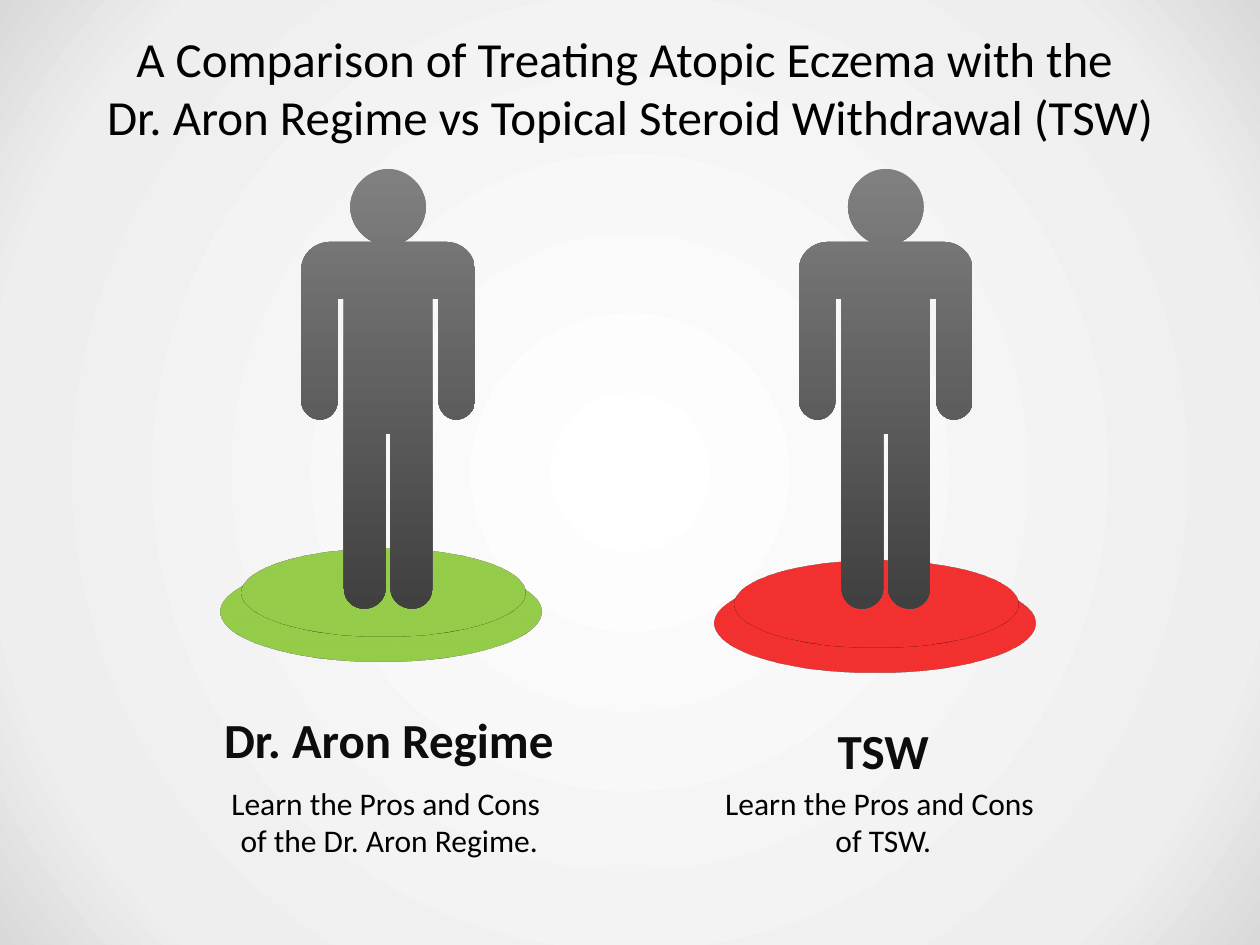
from pptx import Presentation, oxml, util as u
from pptx.dml.color import RGBColor
from pptx.enum import shapes, text

THEME = dict(font="Calibri", ink="000000", head="0D0D0D", big=28, small=18,
             body=("808080", "404040"),
             back=((0, "FFFFFF"), (81, "EEEEEE"), (100, "D9D9D9")))
NS = 'xmlns:a="http://schemas.openxmlformats.org/drawingml/2006/main"'

TITLE = ("A Comparison of Treating Atopic Eczema with the ",
         "Dr. Aron Regime vs Topical Steroid Withdrawal (TSW)")
SIDES = [
    dict(name="Dr. Aron Regime", note=("Learn the Pros and Cons ", "of the Dr. Aron Regime."),
         fill="639A1A", discs=((1.75, 3.58, 2.55), (1.92, 3.58, 2.25)), mid=3.08,
         head=(1.5, 5.58, 3.17, 0.57), foot=(1.5, 6.17, 3.18, 0.71)),
    dict(name="TSW", note=("Learn the Pros and Cons ", "of TSW."),
         fill="C00000", discs=((5.67, 3.67, 2.55), (5.83, 3.67, 2.25)), mid=7.03,
         head=(6.26, 5.67, 1.5, 0.57), foot=(5.42, 6.17, 3.18, 0.71)),
]
TOP = 1.34
TILT = 288  # degrees about the x axis, lays the discs flat
# Right half of the figure from the crown: one point is a line, three a curve
HALF = [
    [(0.16, 0), (0.3, 0.14), (0.3, 0.3)],            # head
    [(0.3, 0.43), (0.22, 0.53), (0.12, 0.58)],
    [(0.46, 0.58)],
    [(0.59, 0.58), (0.69, 0.68), (0.69, 0.8)],       # shoulder
    [(0.69, 1.84)],
    [(0.69, 1.92), (0.62, 1.99), (0.54, 1.99)],      # hand
    [(0.46, 1.99), (0.4, 1.92), (0.4, 1.84)],
    [(0.4, 1.03)], [(0.35, 1.03)], [(0.35, 3.33)],   # armpit and leg
    [(0.35, 3.42), (0.28, 3.49), (0.19, 3.49)],      # foot
    [(0.1, 3.49), (0.02, 3.42), (0.02, 3.33)],
    [(0.02, 2.1)],                                   # crotch
]


def rgb(code):
    return RGBColor.from_string(code)


def write(slide, box, lines, size, color, bold=False, split=True):
    """Centred text; split gives each line its own paragraph, else a break."""
    frame = slide.shapes.add_textbox(*map(u.Inches, box)).text_frame
    frame.word_wrap = True
    para = frame.paragraphs[0]
    for i, line in enumerate(lines):
        if i and split:
            para = frame.add_paragraph()
        elif i:
            para.add_line_break()
        para.alignment = text.PP_ALIGN.CENTER
        run = para.add_run()
        run.text = line
        font = run.font
        font.name, font.size, font.bold = THEME["font"], u.Pt(size), bold
        font.color.rgb = rgb(color)
    return frame


def stand(slide, side):
    for left, top, size in side["discs"]:
        disc = slide.shapes.add_shape(
            shapes.MSO_SHAPE.OVAL, *map(u.Inches, (left, top, size, size)))
        disc.shadow.inherit = False
        disc.fill.solid()
        disc.fill.fore_color.rgb = rgb(side["fill"])
        disc.line.fill.background()
        disc.element.spPr.append(oxml.parse_xml(
            f'<a:scene3d {NS}><a:camera prst="orthographicFront">'
            f'<a:rot lat="{TILT * 60000}" lon="0" rev="0"/></a:camera>'
            '<a:lightRig rig="threePt" dir="t"/></a:scene3d>'))


def bend(shape, sizes):
    """Join each group of three line steps into one Bezier curve."""
    steps = iter(shape.element.xpath(".//a:path/a:lnTo"))
    for size in sizes:
        group = [next(steps) for _ in range(size)]
        if size == 3:
            curve = oxml.parse_xml(f"<a:cubicBezTo {NS}/>")
            group[0].addprevious(curve)
            for step in group:
                curve.append(step[0])
                step.getparent().remove(step)


def person(slide, mid):
    right = [(0, 0)] + [spot for step in HALF for spot in step]
    outline = right + [(-x, y) for x, y in reversed(right)]
    sizes = [len(step) for step in HALF]
    spots = [(u.Inches(mid + x), u.Inches(TOP + y)) for x, y in outline]
    pen = slide.shapes.build_freeform(*spots[0], scale=1.0)
    pen.add_line_segments(spots[1:], close=True)
    body = pen.convert_to_shape()
    bend(body, sizes + [1] + sizes[::-1])
    body.shadow.inherit = False
    body.line.fill.background()
    body.fill.gradient()
    body.fill.gradient_angle = 270
    for stop, color in zip(body.fill.gradient_stops, THEME["body"]):
        stop.color.rgb = rgb(color)


def glow(slide):
    """Circular background gradient from the slide centre."""
    slide.background.fill.gradient()
    old = slide.element.xpath(".//p:bgPr/a:gradFill")[0]
    stops = "".join(f'<a:gs pos="{at * 1000}"><a:srgbClr val="{color}"/></a:gs>'
                    for at, color in THEME["back"])
    new = oxml.parse_xml(
        f'<a:gradFill {NS} rotWithShape="1"><a:gsLst>{stops}</a:gsLst><a:path path="circle">'
        '<a:fillToRect l="50000" t="50000" r="50000" b="50000"/></a:path></a:gradFill>')
    old.getparent().replace(old, new)


def main():
    deck = Presentation()
    deck.slide_width, deck.slide_height = u.Inches(10), u.Inches(7.5)
    slide = deck.slides.add_slide(deck.slide_layouts[6])
    glow(slide)
    title = write(slide, (0.5, 0.3, 9, 0.78), TITLE, THEME["big"], THEME["ink"], split=False)
    title.vertical_anchor = text.MSO_ANCHOR.MIDDLE
    for side in SIDES:
        stand(slide, side)
        person(slide, side["mid"])
        for box, lines, size, color, bold in (
                (side["head"], [side["name"]], THEME["big"], THEME["head"], True),
                (side["foot"], side["note"], THEME["small"], THEME["ink"], False)):
            frame = write(slide, box, lines, size, color, bold)
            frame.auto_size = text.MSO_AUTO_SIZE.SHAPE_TO_FIT_TEXT
    deck.save("out.pptx")


if __name__ == "__main__":
    main()
